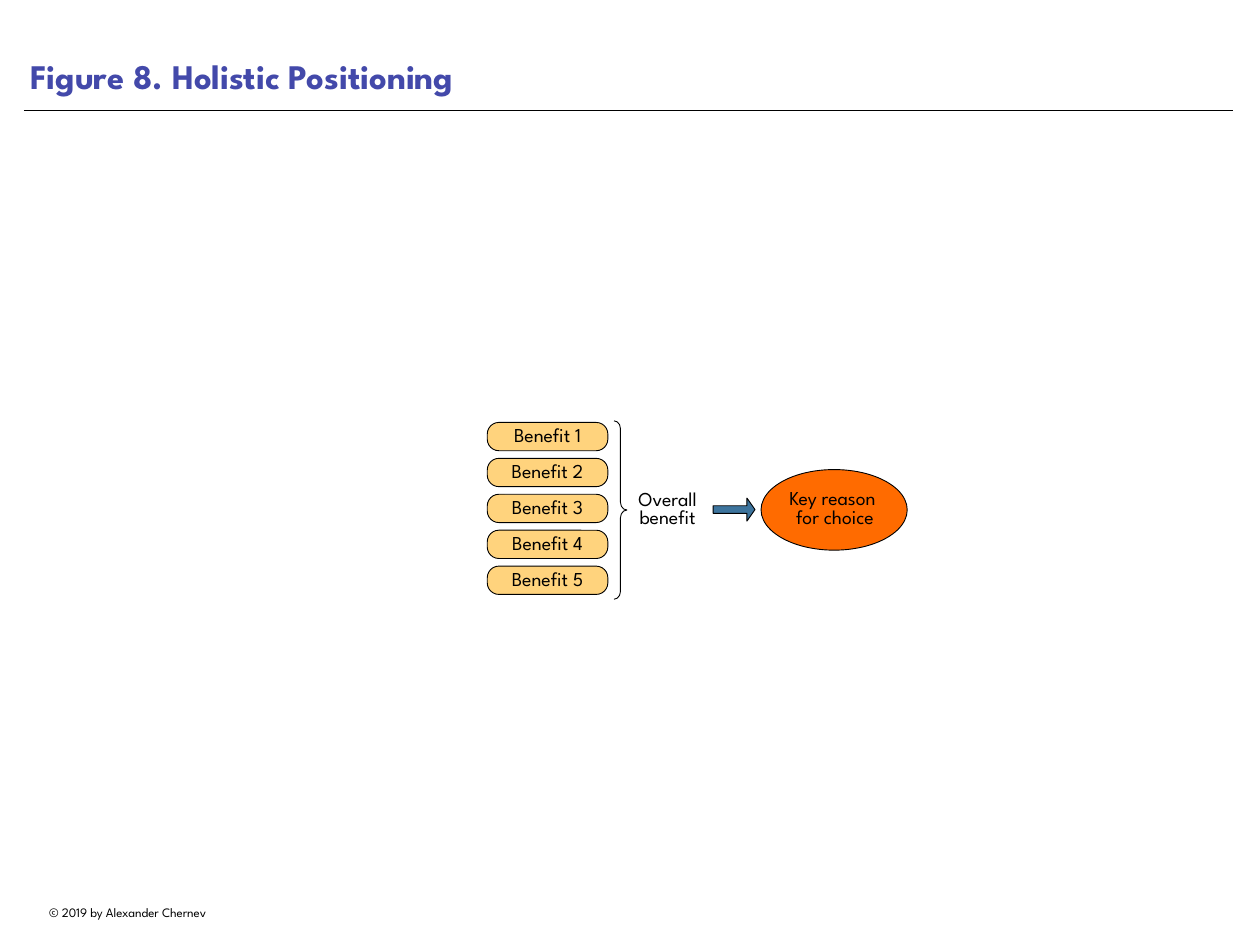
from dataclasses import dataclass
from lxml.etree import SubElement
from pptx import Presentation
from pptx.dml.color import RGBColor as RGB
from pptx.enum.shapes import MSO_CONNECTOR as CONN, MSO_SHAPE as SHAPE
from pptx.enum.text import MSO_ANCHOR as ANCHOR, PP_ALIGN as ALIGN
from pptx.oxml.ns import qn
from pptx.util import Pt


@dataclass(frozen=True)
class Theme:
    """Font, colours and type sizes of the slide."""
    font: str = "League Spartan"
    ink: str = "000000"
    title: str = "4349AA"
    benefit: str = "FFD37D"
    arrow: str = "3D749D"
    choice: str = "FF6B00"
    title_size: float = 28
    body_size: float = 16
    footer_size: float = 10.5
    outline: float = 0.75
    rule: float = 0.5


class Figure:
    """Draws elements on one slide in one theme, in points."""

    def __init__(self, slide, theme):
        self.s = slide
        self.t = theme

    def label(self, sp, text, size=None, color=None, bold=False, align=ALIGN.CENTER,
              anchor=ANCHOR.MIDDLE, inset=0, spacing=1.0, wrap=True):
        """Fill a shape's text frame, one paragraph per line."""
        tf = sp.text_frame
        tf.word_wrap = wrap
        tf.vertical_anchor = anchor
        tf.margin_left = tf.margin_right = tf.margin_top = tf.margin_bottom = Pt(inset)
        tf.text = text
        for p in tf.paragraphs:
            p.alignment = align
            p.line_spacing = spacing
            p.font.name = self.t.font
            p.font.size = Pt(size or self.t.body_size)
            p.font.bold = bold
            p.font.color.rgb = RGB.from_string(color or self.t.ink)

    def text(self, box, text, **style):
        """Add a text box."""
        sp = self.s.shapes.add_textbox(*map(Pt, box))
        self.label(sp, text, **style)

    def shape(self, kind, box, fill=None, adjust=()):
        """Add an outlined preset shape, filled if a colour is given."""
        sp = self.s.shapes.add_shape(kind, *map(Pt, box))
        sp.shadow.inherit = False
        for i, value in enumerate(adjust):
            sp.adjustments[i] = value
        if fill:
            sp.fill.solid()
            sp.fill.fore_color.rgb = RGB.from_string(fill)
        else:
            sp.fill.background()
        sp.line.color.rgb = RGB.from_string(self.t.ink)
        sp.line.width = Pt(self.t.outline)
        return sp

    def line(self, x1, y1, x2, y2):
        """Add a thin straight rule."""
        c = self.s.shapes.add_connector(CONN.STRAIGHT, *map(Pt, (x1, y1, x2, y2)))
        c.line.color.rgb = RGB.from_string(self.t.ink)
        c.line.width = Pt(self.t.rule)
        SubElement(c._element.spPr, qn("a:effectLst"))


def main():
    """Build the positioning slide."""
    prs = Presentation()
    prs.slide_width, prs.slide_height = Pt(1024), Pt(768)
    t = Theme()
    fig = Figure(prs.slides.add_slide(prs.slide_layouts[6]), t)

    fig.text((19.5, 731.5, 168.5, 20), "© 2019 by Alexander Chernev",
             size=t.footer_size, wrap=False)
    fig.line(19.5, 89.3, 1002, 89.3)
    fig.text((19.5, 0, 982, 83), "Figure 8. Holistic Positioning", size=t.title_size,
             color=t.title, bold=True, align=ALIGN.LEFT, anchor=ANCHOR.BOTTOM, inset=5)

    top, pitch = 343.3, 29.2
    for i in range(5):
        sp = fig.shape(SHAPE.ROUNDED_RECTANGLE, (396, top + i * pitch, 98, 23),
                       t.benefit, [0.41])
        fig.label(sp, f"Benefit {i + 1}", spacing=0.9)

    fig.shape(SHAPE.RIGHT_BRACE, (499, 342, 10.5, 145), adjust=[0.6, 0.5])
    fig.text((508.3, 392.4, 68.4, 44), "Overall\nbenefit", inset=4.3, spacing=0.8, wrap=False)
    fig.shape(SHAPE.RIGHT_ARROW, (579.6, 404.8, 34, 18.7), t.arrow, [0.33, 0.35])
    fig.shape(SHAPE.OVAL, (618.5, 381.6, 118.8, 65.5), t.choice)
    fig.text((620.6, 389.5, 116, 49), "Key reason \vfor choice", spacing=0.8)

    prs.save("out.pptx")


if __name__ == "__main__":
    main()
